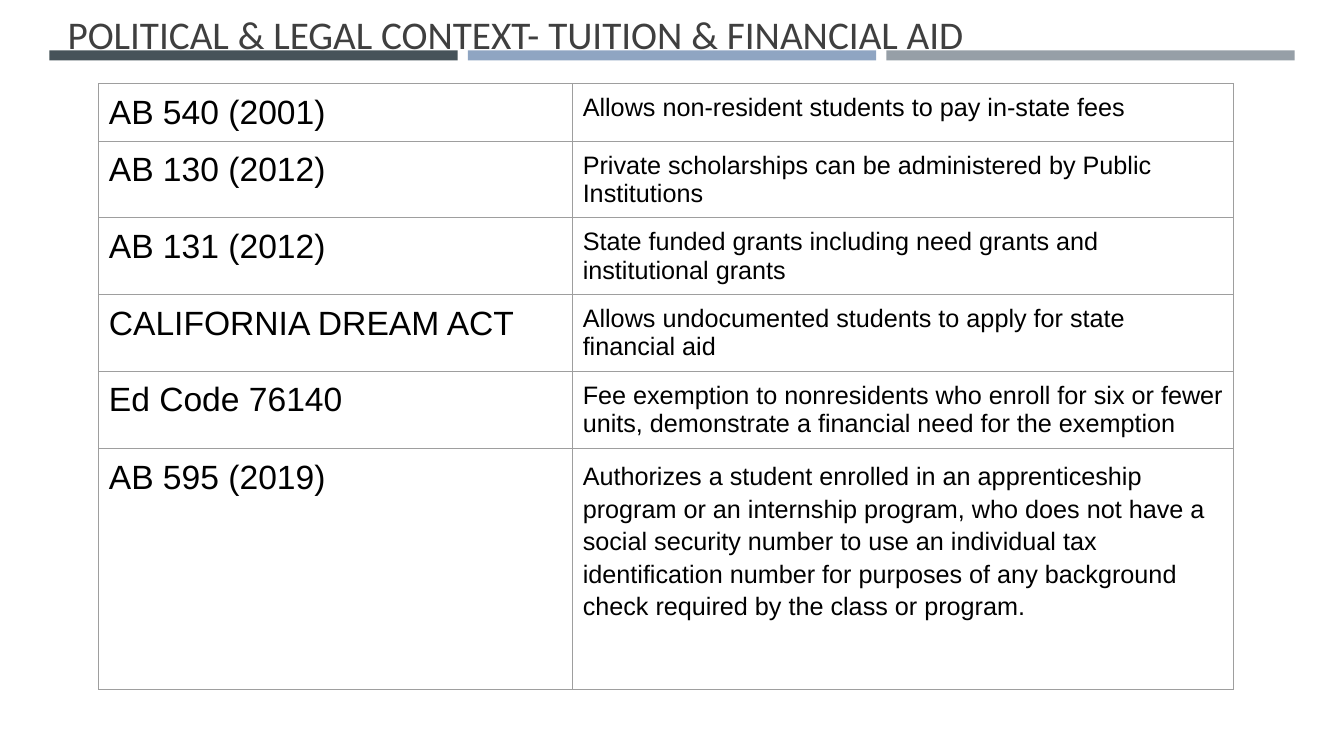
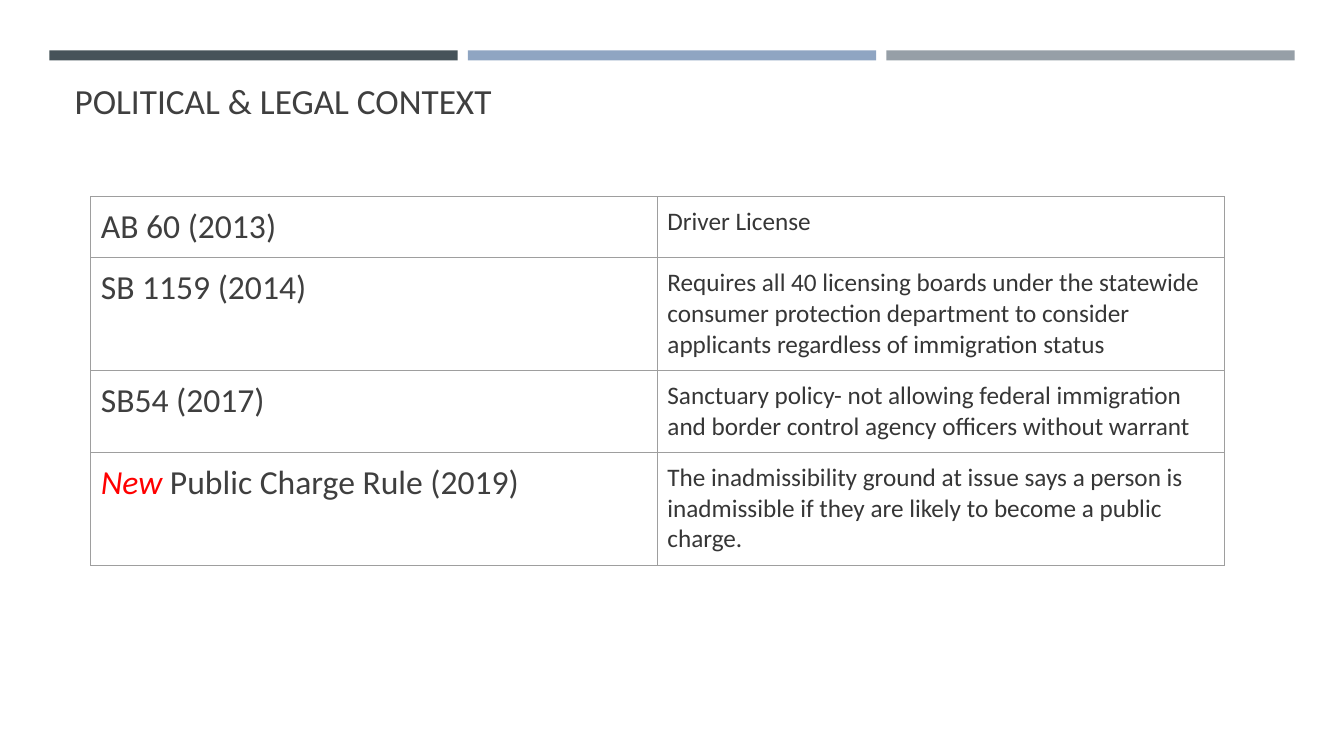
"""Builds two slides on the political and legal context of student aid."""
from dataclasses import dataclass

from lxml import etree
from pptx import Presentation
from pptx.dml.color import RGBColor
from pptx.enum.shapes import MSO_SHAPE
from pptx.enum.text import MSO_ANCHOR, MSO_AUTO_SIZE, PP_ALIGN
from pptx.oxml.ns import qn
from pptx.util import Inches, Pt

RECT = MSO_SHAPE.RECTANGLE
TOP, BOTTOM = MSO_ANCHOR.TOP, MSO_ANCHOR.BOTTOM
LEFT = PP_ALIGN.LEFT
NO_FIT = MSO_AUTO_SIZE.NONE
TITLE_ONLY = 5


@dataclass(frozen=True)
class Theme:
    """Colours, fonts and type sizes shared by the slides."""
    bands: tuple = ("465359", "8FA5C2", "969FA7")
    ink: str = "3F3F3F"
    detail: str = "363636"
    black: str = "000000"
    accent: str = "FF0000"
    border: str = "9E9E9E"
    border_width: float = 0.75
    heading_font: str = "Calibri"
    plain_font: str = "Arial"
    wide_title_size: float = 28
    title_size: float = 25.2
    name_size: int = 24
    detail_size: int = 18
    inset: float = 0.1


THEME = Theme()

TUITION_ROWS = [
    ("AB 540 (2001)", "Allows non-resident students to pay in-state fees"),
    ("AB 130 (2012)", "Private scholarships can be administered by Public Institutions"),
    ("AB 131 (2012)", "State funded grants including need grants and institutional grants"),
    ("CALIFORNIA DREAM ACT", "Allows undocumented students to apply for state financial aid"),
    ("Ed Code 76140", "Fee exemption to nonresidents who enroll for six or fewer units, "
                      "demonstrate a financial need for the exemption"),
    ("AB 595 (2019)", "Authorizes a student enrolled in an apprenticeship program or an "
                      "internship program, who does not have a social security number to use "
                      "an individual tax identification number for purposes of any background "
                      "check required by the class or program."),
]

CONTEXT_ROWS = [
    ("AB 60 (2013)", "Driver License"),
    ("SB 1159 (2014)", "Requires all 40 licensing boards under the statewide "
                       "consumer protection department to consider "
                       "applicants regardless of immigration status"),
    ("SB54 (2017)", "Sanctuary policy- not allowing federal immigration and "
                    "border control agency officers without warrant"),
    (("New ", "Public Charge Rule (2019)"),
     "The inadmissibility ground at issue says a person is "
     "inadmissible if they are likely to become a public charge."),
]


def add_run(p, text, font, size, color, italic=False):
    """Add a formatted run to a paragraph."""
    r = p.add_run()
    r.text = text
    for name, value in {"name": font, "size": Pt(size), "italic": italic}.items():
        setattr(r.font, name, value)
    r.font.color.rgb = RGBColor.from_string(color)


def add_bands(s, layout):
    """Draw the three bands and move them to the back of the layout."""
    width, gap = 4.05, 0.1
    for i, color in enumerate(THEME.bands):
        left = 0.49 + i * (width + gap)
        sp = s.shapes.add_shape(RECT, Inches(left), Inches(0.5), Inches(width), Inches(0.1))
        sp.shadow.inherit = False
        sp.fill.solid()
        sp.fill.fore_color.rgb = RGBColor.from_string(color)
        sp.line.fill.background()
        sp.name = f"Band {i + 1}"
        sp.element.nvSpPr.cNvPr.set("id", str(20 + i))
        layout.shapes.element.insert(2 + i, sp.element)


def set_title(s, text, box, size, anchor, inset):
    """Place and format the title placeholder."""
    sp = s.shapes.title
    for name, value in zip(("left", "top", "width", "height"), box):
        setattr(sp, name, Inches(value))
    tf = sp.text_frame
    formats = {
        "word_wrap": True, "auto_size": NO_FIT, "vertical_anchor": anchor,
        "margin_left": Inches(THEME.inset), "margin_right": Inches(THEME.inset),
        "margin_top": Inches(inset), "margin_bottom": Inches(inset),
    }
    for name, value in formats.items():
        setattr(tf, name, value)
    p = tf.paragraphs[0]
    p.alignment = LEFT
    add_run(p, text, THEME.heading_font, size, THEME.ink)


def format_cell(cell):
    """Give a cell its insets, thin borders and no fill."""
    for side in ("left", "right", "top", "bottom"):
        setattr(cell, f"margin_{side}", Inches(THEME.inset))
    cell.vertical_anchor = TOP
    tc_pr = cell._tc.get_or_add_tcPr()
    for tag in ("a:lnL", "a:lnR", "a:lnT", "a:lnB"):
        ln = etree.SubElement(tc_pr, qn(tag), w=str(Pt(THEME.border_width)))
        fill = etree.SubElement(ln, qn("a:solidFill"))
        etree.SubElement(fill, qn("a:srgbClr"), val=THEME.border)
    cell.fill.background()


def fill_cell(cell, content, font, size, color):
    """Write a cell; in a tuple, the parts before the last are accented."""
    format_cell(cell)
    p = cell.text_frame.paragraphs[0]
    *leads, text = (content,) if isinstance(content, str) else content
    for lead in leads:
        add_run(p, lead, font, size, THEME.accent, italic=True)
    add_run(p, text, font, size, color)


def add_law_table(s, rows, left, top, widths, heights, font, colors):
    """Add a table of law names and what each law does."""
    frame = s.shapes.add_table(len(rows), 2, Inches(left), Inches(top),
                               Inches(sum(widths)), Inches(sum(heights)))
    table = frame.table
    table.first_row = table.horz_banding = False
    for column, width in zip(table.columns, widths):
        column.width = Inches(width)
    sizes = (THEME.name_size, THEME.detail_size)
    for table_row, row, height in zip(table.rows, rows, heights):
        table_row.height = Inches(height)
        for cell, content, size, color in zip(table_row.cells, row, sizes, colors):
            fill_cell(cell, content, font, size, color)
    return table


def build_tuition_slide(s):
    """Build the slide on tuition and financial aid."""
    set_title(s, "POLITICAL & LEGAL CONTEXT- TUITION & FINANCIAL AID",
              (0.57, 0, 12.18, 1.1), THEME.wide_title_size, TOP, 0.1)
    table = add_law_table(s, TUITION_ROWS, 0.98, 0.83, (4.7, 6.55),
                          (0.56, 0.75, 0.75, 0.75, 0.77, 2.39),
                          THEME.plain_font, (THEME.black, THEME.black))
    table.cell(len(TUITION_ROWS) - 1, 1).text_frame.paragraphs[0].line_spacing = 1.15


def build_context_slide(s):
    """Build the slide on the wider legal context."""
    set_title(s, "POLITICAL & LEGAL CONTEXT", (0.64, 0.79, 12.06, 0.47),
              THEME.title_size, BOTTOM, 0.05)
    add_law_table(s, CONTEXT_ROWS, 0.9, 1.95, (5.62, 5.62), (0.6, 1.12, 0.8, 1.12),
                  THEME.heading_font, (THEME.ink, THEME.detail))


def main():
    """Create the presentation and save it."""
    prs = Presentation()
    prs.slide_width, prs.slide_height = Inches(13.33), Inches(7.5)
    layout = prs.slide_layouts[TITLE_ONLY]
    slides = [prs.slides.add_slide(layout) for _ in range(2)]
    add_bands(slides[0], layout)
    for build, s in zip((build_tuition_slide, build_context_slide), slides):
        build(s)
    prs.save("out.pptx")


if __name__ == "__main__":
    main()
